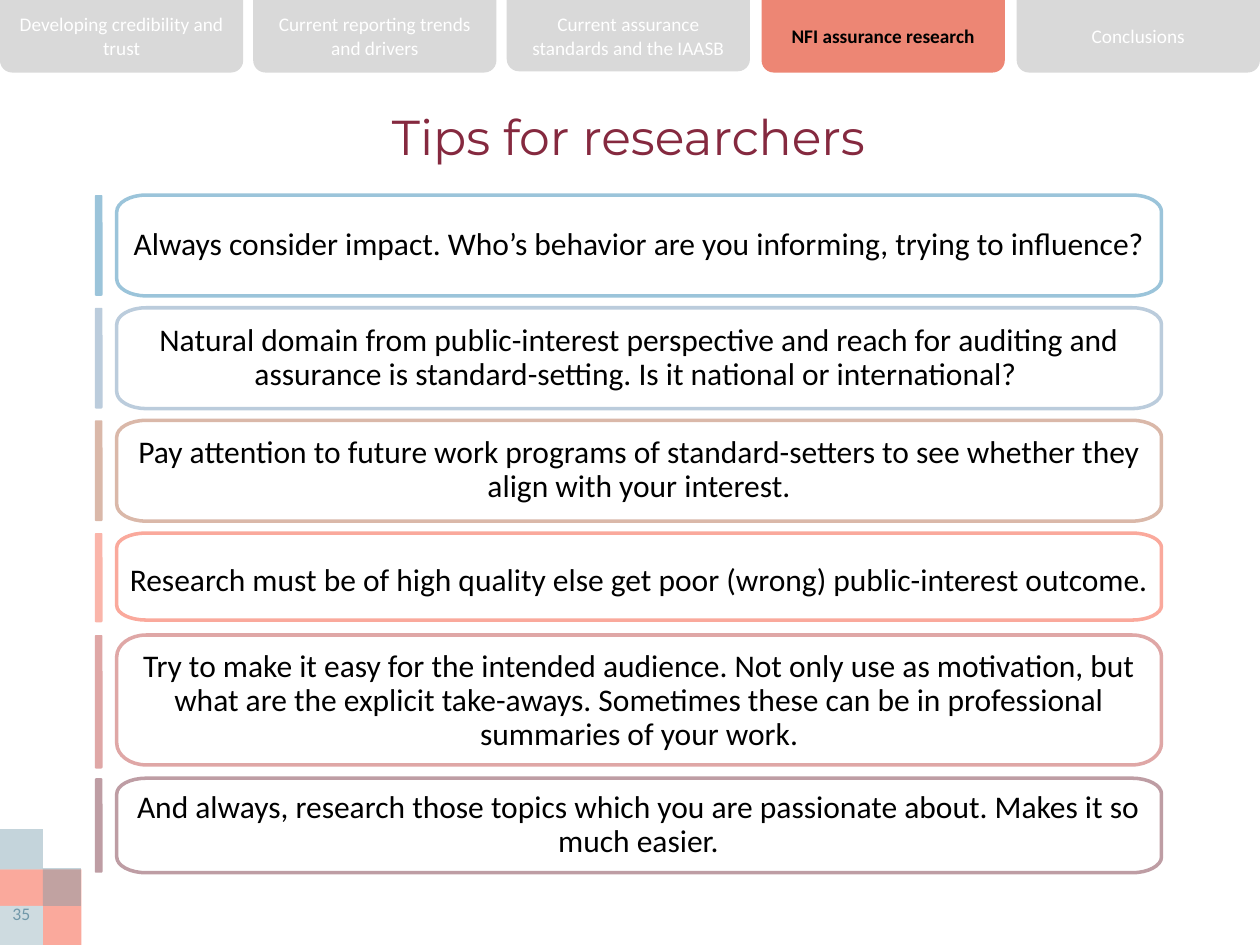
from dataclasses import dataclass
from typing import Optional

from lxml import etree
from pptx import Presentation
from pptx.dml.color import RGBColor
from pptx.enum import shapes as kinds, text as txt
from pptx.oxml import ns
from pptx.util import Pt

BLACK = RGBColor(0, 0, 0)
WHITE = RGBColor(255, 255, 255)
GREY = RGBColor(0xD9, 0xD9, 0xD9)
CORAL = RGBColor(0xED, 0x86, 0x74)
WINE = RGBColor(0x85, 0x29, 0x3F)
PINK = RGBColor(0xFA, 0xA9, 0x9C)
PALE = RGBColor(0xCE, 0xDB, 0xE0)
STEEL = RGBColor(0x71, 0x98, 0xA9)
SKY = RGBColor(0x9B, 0xC4, 0xDA)
MIST = RGBColor(0xBB, 0xCC, 0xDC)
SAND = RGBColor(0xDA, 0xB8, 0xA9)
ROSE = RGBColor(0xDF, 0xA7, 0xA6)
MAUVE = RGBColor(0xBE, 0x9D, 0xA4)


@dataclass
class Box:
    left: float
    top: float
    width: float
    height: float

    def emu(self) -> list:
        return [Pt(n) for n in (self.left, self.top, self.width, self.height)]


@dataclass
class Tile:
    box: Box
    color: RGBColor
    alpha: Optional[int] = None


@dataclass
class Tab:
    label: str
    left: float
    top: float = 0
    lines: int = 2
    live: bool = False


@dataclass
class Tip:
    text: str
    color: RGBColor
    top: float
    bar: float   # height of the side bar
    card: float  # height of the outlined card
    alpha: Optional[int] = None
    label: Optional[Box] = None  # own text box on top of the card
    spacing: float = 0.9


TILES = [
    Tile(Box(0, 496.8, 46.5, 43.9), PINK),
    Tile(Box(0, 517.7, 24.5, 23), PALE),
    Tile(Box(0, 473.8, 24.5, 23), STEEL, 41),
    Tile(Box(24.5, 496.1, 21.8, 21.6), STEEL, 41),
]
TABS = [
    Tab("Developing credibility and trust", 0),
    Tab("Current reporting trends and drivers", 144.7),
    Tab("Current assurance standards and the IAASB", 289.6, -0.7),
    Tab("NFI assurance research", 435.2, lines=1, live=True),
    Tab("Conclusions", 581, lines=1),
]
TIPS = [
    Tip("Always consider impact. Who’s behavior are you informing, trying to "
        "influence?", SKY, 111.5, 57.6, 57.6),
    Tip("Natural domain from public-interest perspective and reach for auditing "
        "and assurance is standard-setting. Is it national or international? ",
        MIST, 175.9, 57.6, 57.6),
    Tip("Pay attention to future work programs of standard-setters to see "
        "whether they align with your interest.", SAND, 240.2, 57.6, 57.6),
    Tip("Research must be of high quality else get poor (wrong) public-interest "
        "outcome. ", PINK, 304.6, 51, 49.7, 85,
        Box(66.7, 314.2, 597, 33.1), 1),
    Tip("Try to make it easy for the intended audience. Not only use as "
        "motivation, but what are the explicit take-aways. Sometimes these can "
        "be in professional summaries of your work.", ROSE, 362.9, 76.3, 74.2,
        label=Box(66.7, 367.9, 597, 66.2)),
    Tip("And always, research those topics which you are passionate about. "
        "Makes it so much easier.", MAUVE, 444.7, 54, 54,
        label=Box(66.7, 448.6, 596.2, 46.8)),
]


def block(slide, kind, box: Box, color: RGBColor, alpha: Optional[int] = None):
    """Draw a filled preset shape without an outline."""
    shape = slide.shapes.add_shape(kind, *box.emu())
    shape.shadow.inherit = False
    shape.fill.solid()
    shape.fill.fore_color.rgb = color
    shape.line.fill.background()
    if alpha is not None:
        tint = shape._element.spPr.find(ns.qn("a:solidFill"))[0]
        etree.SubElement(tint, ns.qn("a:alpha"), val=str(alpha * 1000))
    return shape


def write(shape, words: str, size: float, color: RGBColor,
          face: str = "Calibri", bold: bool = False, middle: bool = True):
    """Put one centred paragraph in a shape."""
    frame = shape.text_frame
    frame.word_wrap = True
    frame.vertical_anchor = (txt.MSO_ANCHOR.MIDDLE if middle
                             else txt.MSO_ANCHOR.TOP)
    para = frame.paragraphs[0]
    para.text = words
    para.alignment = txt.PP_ALIGN.CENTER
    font = para.font
    font.name, font.size, font.bold = face, Pt(size), bold
    font.color.rgb = color
    return para


def label(slide, box: Box, *args, **opts):
    """Add a text box with one centred paragraph."""
    return write(slide.shapes.add_textbox(*box.emu()), *args, **opts)


def card(slide, box: Box, color: RGBColor):
    """Outline a card with elliptical corners."""
    rx, ry, bend = 16.7, box.height / 6, 0.45
    left, top = box.left, box.top
    right, low = left + box.width, top + box.height
    # Each corner: start, two curve handles, end
    points = []
    for x, y, dx, dy, rise in ((left, top, rx, ry, True),
                               (right, top, -rx, ry, False),
                               (right, low, -rx, -ry, True),
                               (left, low, rx, -ry, False)):
        side = [(x, y + dy), (x, y + bend * dy)]
        flat = [(x + bend * dx, y), (x + dx, y)]
        points += side + flat if rise else flat[::-1] + side[::-1]
    spots = [(Pt(x), Pt(y)) for x, y in points]
    pen = slide.shapes.build_freeform(*spots[0])
    pen.add_line_segments(spots[1:], close=True)
    shape = pen.convert_to_shape()
    # Turn the three segments of each corner into one curve
    lines = list(shape._element.iter(ns.qn("a:lnTo")))
    for start in range(0, len(lines), 4):
        curve = etree.Element(ns.qn("a:cubicBezTo"))
        lines[start].addprevious(curve)
        for line in lines[start:start + 3]:
            curve.append(line[0])
            line.getparent().remove(line)
    shape.shadow.inherit = False
    shape.fill.background()
    shape.line.color.rgb = color
    shape.line.width = Pt(2)
    return shape


def main():
    deck = Presentation()
    deck.slide_width, deck.slide_height = Pt(720), Pt(540)
    slide = deck.slides.add_slide(deck.slide_layouts[6])

    # Corner tiles
    for tile in TILES:
        block(slide, kinds.MSO_SHAPE.RECTANGLE, tile.box, tile.color, tile.alpha)

    # Title
    label(slide, Box(8.8, 41.5, 700.6, 72), "Tips for researchers", 28, WINE,
          "Montserrat")

    # Navigation tabs, rounded at the bottom
    for tab in TABS:
        shape = block(slide, kinds.MSO_SHAPE.ROUND_2_SAME_RECTANGLE,
                      Box(tab.left, tab.top, 139, 41.5),
                      CORAL if tab.live else GREY)
        shape._element.spPr.xfrm.set("flipV", "1")
    for tab in TABS:
        high = 33.8 if tab.lines == 2 else 20.6
        label(slide, Box(tab.left, 20.6 - high / 2, 139, high), tab.label, 11,
              BLACK if tab.live else WHITE, bold=tab.live, middle=False)

    # Page number
    label(slide, Box(-6.5, 512.6, 37.4, 31), "35", 10.1, STEEL, middle=False)

    # Tips: side bar, card and text
    for tip in TIPS:
        bar = block(slide, kinds.MSO_SHAPE.ROUNDED_RECTANGLE,
                    Box(54.2, tip.top, 4.4, tip.bar), tip.color, tip.alpha)
        bar.adjustments[0] = 0.17
        shape = card(slide, Box(66.7, tip.top, 597, tip.card), tip.color)
        if tip.label:
            para = label(slide, tip.label, tip.text, 18, BLACK,
                         middle=tip.spacing == 1)
        else:
            para = write(shape, tip.text, 18, BLACK)
        para.line_spacing = tip.spacing

    deck.save("out.pptx")


if __name__ == "__main__":
    main()
